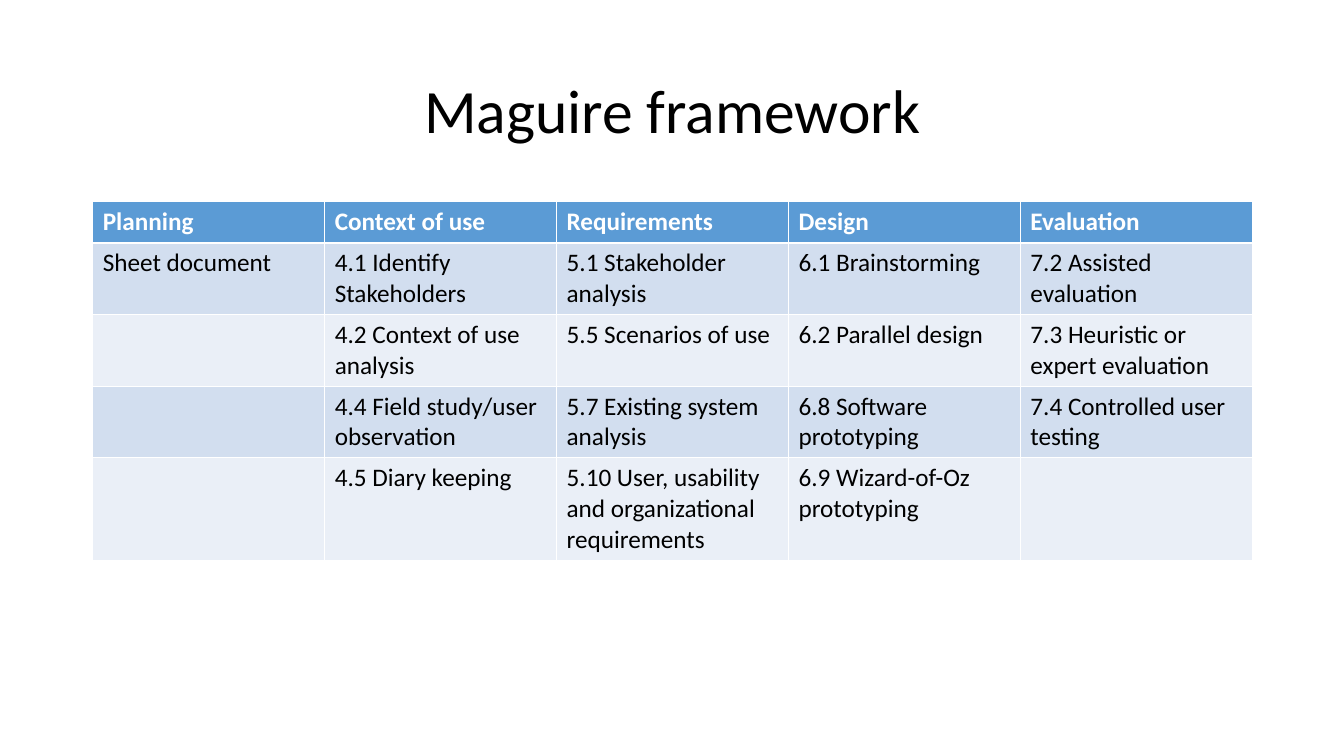
from pptx import Presentation
from pptx.dml.color import RGBColor
from pptx.enum.text import MSO_ANCHOR, PP_ALIGN
from pptx.util import Inches, Pt

COLORS = {
    "text": "000000",
    "header_text": "FFFFFF",
    "header": "5B9BD5",
    "odd_row": "D2DEEF",
    "even_row": "EAEFF7",
}
FONT = "Calibri"
LEFT, WIDTH = Inches(0.92), Inches(11.5)
ROW_HEIGHT = Inches(0.41)

METHODS = [
    ["Planning", "Context of use", "Requirements", "Design", "Evaluation"],
    ["Sheet document", "4.1 Identify Stakeholders", "5.1 Stakeholder analysis",
     "6.1 Brainstorming", "7.2 Assisted evaluation"],
    ["", "4.2 Context of use analysis", "5.5 Scenarios of use",
     "6.2 Parallel design", "7.3 Heuristic or expert evaluation"],
    ["", "4.4 Field study/user observation", "5.7 Existing system analysis",
     "6.8 Software prototyping", "7.4 Controlled user testing"],
    ["", "4.5 Diary keeping", "5.10 User, usability and organizational requirements",
     "6.9 Wizard-of-Oz prototyping", ""],
]


def color(name):
    return RGBColor.from_string(COLORS[name])


def style_font(paragraph, size, color_name, bold=False):
    font = paragraph.font
    font.name, font.size, font.bold = FONT, Pt(size), bold
    font.color.rgb = color(color_name)


def add_title(page, text):
    title = page.shapes.title
    title.left, title.top, title.width, title.height = LEFT, Inches(0.4), WIDTH, Inches(1.45)
    title.text_frame.text = text
    title.text_frame.vertical_anchor = MSO_ANCHOR.MIDDLE
    paragraph = title.text_frame.paragraphs[0]
    paragraph.alignment = PP_ALIGN.CENTER
    paragraph.line_spacing = 0.9
    style_font(paragraph, 44, "text")


def fill_cell(cell, text, row_number):
    is_header = row_number == 0
    band = "header" if is_header else "odd_row" if row_number % 2 else "even_row"
    cell.fill.solid()
    cell.fill.fore_color.rgb = color(band)
    cell.text = text
    style_font(cell.text_frame.paragraphs[0], 18,
               "header_text" if is_header else "text", is_header)


def add_methods_table(page, rows):
    """Add the table; its default style supplies the white cell borders."""
    table = page.shapes.add_table(len(rows), len(rows[0]), LEFT, Inches(2),
                                  WIDTH, ROW_HEIGHT * len(rows)).table
    for row_number, texts in enumerate(rows):
        for column_number, text in enumerate(texts):
            fill_cell(table.cell(row_number, column_number), text, row_number)


def main():
    deck = Presentation()
    deck.slide_width, deck.slide_height = Inches(13.33), Inches(7.5)
    page = deck.slides.add_slide(deck.slide_layouts.get_by_name("Title Only"))
    add_title(page, "Maguire framework")
    add_methods_table(page, METHODS)
    deck.save("out.pptx")


if __name__ == "__main__":
    main()
